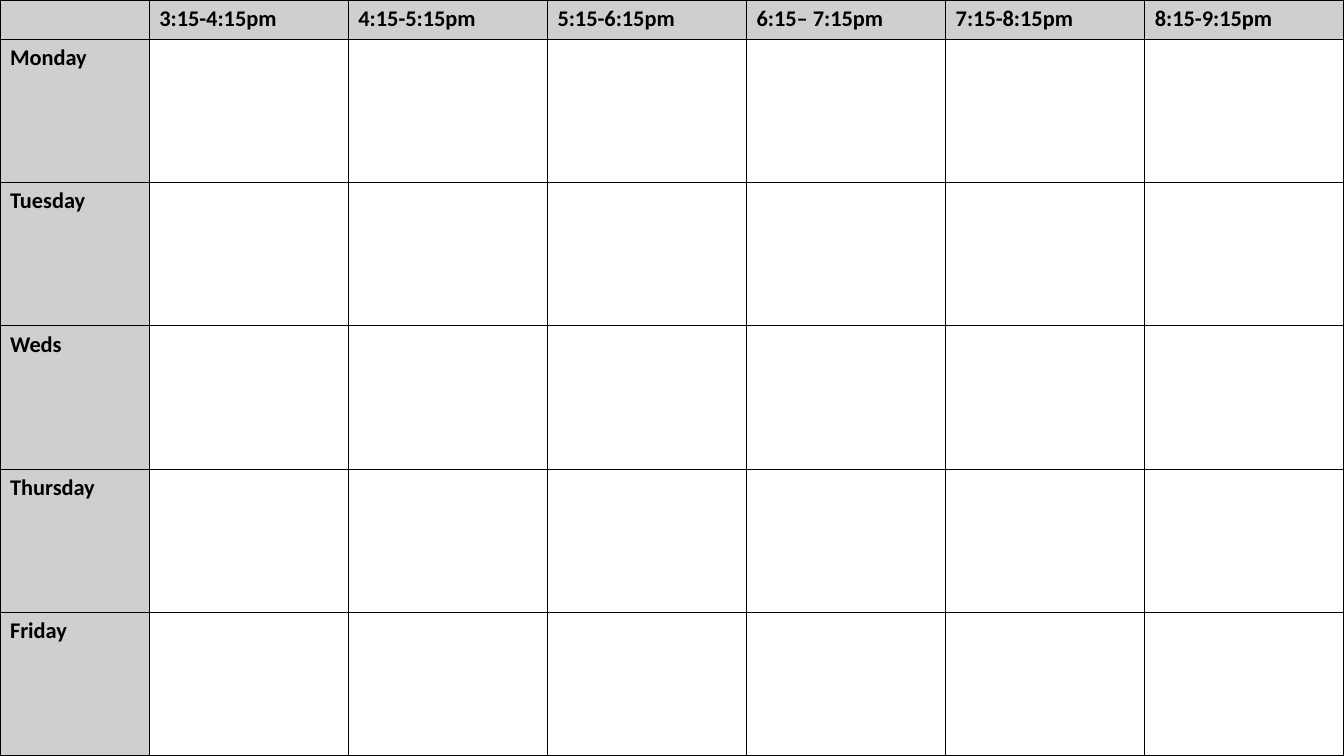
from lxml.etree import SubElement
from pptx import Presentation
from pptx.dml.color import RGBColor
from pptx.oxml.ns import qn
from pptx.util import Inches, Pt

COLORS = {"heading": "D0CECE", "slot": "FFFFFF", "ink": "000000"}
TIMES = ["3:15-4:15pm", "4:15-5:15pm", "5:15-6:15pm",
         "6:15– 7:15pm", "7:15-8:15pm", "8:15-9:15pm"]
DAYS = ["Monday", "Tuesday", "Weds", "Thursday", "Friday"]
WIDTH, HEIGHT = Inches(13.33), Inches(7.5)
DAY_WIDTH, TIME_HEIGHT = Inches(1.48), Inches(0.39)


def add_borders(cell):
    properties = cell._tc.get_or_add_tcPr()
    for side in ("a:lnL", "a:lnR", "a:lnT", "a:lnB"):
        line = SubElement(properties, qn(side), w=str(Pt(1)))
        fill = SubElement(line, qn("a:solidFill"))
        SubElement(fill, qn("a:srgbClr"), val=COLORS["ink"])


deck = Presentation()
deck.slide_width, deck.slide_height = WIDTH, HEIGHT
page = deck.slides.add_slide(deck.slide_layouts[6])

timetable = page.shapes.add_table(
    len(DAYS) + 1, len(TIMES) + 1, 0, 0, WIDTH, HEIGHT).table
timetable.horz_banding = False

for index, column in enumerate(timetable.columns):
    column.width = (WIDTH - DAY_WIDTH) // len(TIMES) if index else DAY_WIDTH
for index, row in enumerate(timetable.rows):
    row.height = (HEIGHT - TIME_HEIGHT) // len(DAYS) if index else TIME_HEIGHT

for row_index, day in enumerate([""] + DAYS):
    for column_index, time in enumerate([""] + TIMES):
        cell = timetable.cell(row_index, column_index)
        is_slot = row_index > 0 and column_index > 0
        add_borders(cell)
        cell.fill.solid()
        cell.fill.fore_color.rgb = RGBColor.from_string(
            COLORS["slot" if is_slot else "heading"])
        if row_index == 0:
            cell.margin_bottom = Inches(0.02)
        if not is_slot:
            cell.text = day or time
        font = cell.text_frame.paragraphs[0].font
        font.name, font.size, font.bold = "Calibri", Pt(16), not is_slot
        font.color.rgb = RGBColor.from_string(COLORS["ink"])

deck.save("out.pptx")
